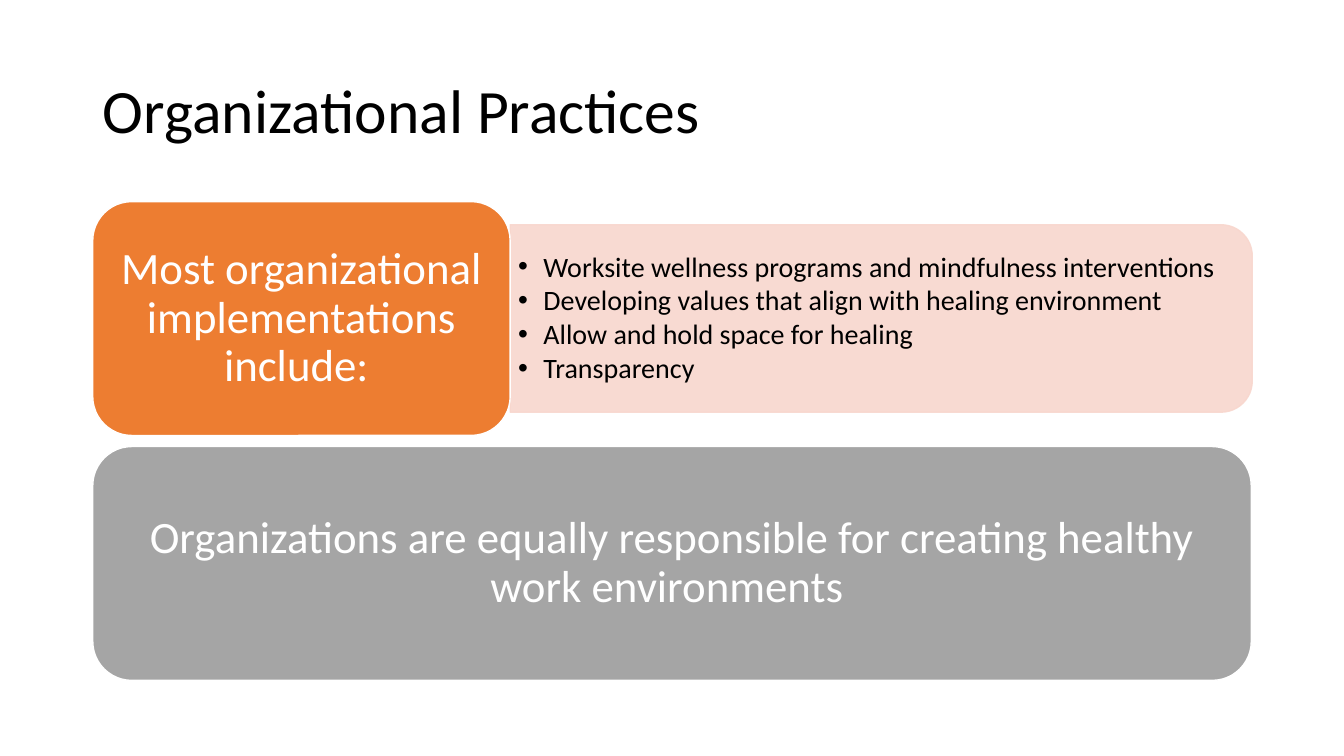
from lxml import etree
from pptx import Presentation
from pptx.dml.color import RGBColor
from pptx.enum import shapes, text
from pptx.oxml import ns
from pptx.util import Inches, Pt

TITLE = "Organizational Practices"
PRACTICES = [
    "Worksite wellness programs and mindfulness interventions",
    "Developing values that align with healing environment",
    "Allow and hold space for healing",
    "Transparency",
]
# text, width, fill; the trailing space shifts the centred last line
CARDS = [
    ("Most organizational implementations include: ", 4.14, "ED7D31"),
    ("Organizations are equally responsible for creating healthy work environments ",
     11.49, "A5A5A5"),
]
FONT = "Calibri"
LEFT, TOP = 0.92, 2
CARD_HEIGHT, CARD_STEP = 2.32, 2.43
PANEL_WIDTH, PANEL_HEIGHT = 7.36, 1.86
PANEL_COLOR, PANEL_OPACITY = "F8D7CE", 90


def color(hex_string):
    return RGBColor.from_string(hex_string)


def place(shape, left, top, width, height):
    shape.left, shape.top = Inches(left), Inches(top)
    shape.width, shape.height = Inches(width), Inches(height)


def set_frame(frame, side, edge):
    """Wrap and vertically centre a text frame with the given insets."""
    frame.word_wrap = True
    frame.auto_size = text.MSO_AUTO_SIZE.NONE
    frame.vertical_anchor = text.MSO_ANCHOR.MIDDLE
    frame.margin_left = frame.margin_right = Inches(side)
    frame.margin_top = frame.margin_bottom = Inches(edge)


def style(para, size, hex_string, align, after=0):
    para.font.name, para.font.size = FONT, Pt(size)
    para.font.color.rgb = color(hex_string)
    para.alignment = align
    para.line_spacing = 0.9
    para.space_before, para.space_after = Pt(0), Pt(after)


def add_bullet(para, indent):
    props = para._p.get_or_add_pPr()
    props.set("marL", str(Inches(indent)))
    props.set("indent", str(-Inches(indent)))
    bullet = etree.Element(ns.qn("a:buChar"), char="•")
    props.insert_element_before(bullet, "a:tabLst", "a:defRPr", "a:extLst")


def add_block(page, kind, box, fill, line):
    block = page.shapes.add_shape(kind, *map(Inches, box))
    block.shadow.inherit = False
    block.fill.solid()
    block.fill.fore_color.rgb = color(fill)
    block.line.color.rgb = color(line)
    block.line.width = Pt(1)
    return block


def add_panel(page):
    """Add the pale panel, turned so that its rounded side faces right."""
    middle_x = LEFT + CARDS[0][1] + PANEL_WIDTH / 2
    middle_y = TOP + CARD_HEIGHT / 2
    box = (middle_x - PANEL_HEIGHT / 2, middle_y - PANEL_WIDTH / 2,
           PANEL_HEIGHT, PANEL_WIDTH)
    panel = add_block(page, shapes.MSO_SHAPE.ROUND_2_SAME_RECTANGLE, box,
                      PANEL_COLOR, PANEL_COLOR)
    panel.rotation = 90
    for tint in panel.element.spPr.iter(ns.qn("a:srgbClr")):
        etree.SubElement(tint, ns.qn("a:alpha"), val=str(PANEL_OPACITY * 1000))
    return panel


def main():
    deck = Presentation()
    deck.slide_width, deck.slide_height = Inches(13.33), Inches(7.5)
    page = deck.slides.add_slide(deck.slide_layouts[1])

    title = page.shapes.title
    place(title, LEFT, 0.4, 11.5, 1.45)
    title.text_frame.text = TITLE
    set_frame(title.text_frame, 0.1, 0.05)
    style(title.text_frame.paragraphs[0], 44, "000000", text.PP_ALIGN.LEFT)

    practices = page.placeholders[1]
    place(practices, LEFT + CARDS[0][1], 2.32, 7.27, 1.68)
    practices.text_frame.text = "\n".join(PRACTICES)
    set_frame(practices.text_frame, 0.08, 0.04)
    for para in practices.text_frame.paragraphs:
        style(para, 20, "000000", text.PP_ALIGN.LEFT, after=2.5)
        add_bullet(para, 0.25)
    practices.element.addprevious(add_panel(page).element)

    for row, (words, width, fill) in enumerate(CARDS):
        box = (LEFT, TOP + row * CARD_STEP, width, CARD_HEIGHT)
        card = add_block(page, shapes.MSO_SHAPE.ROUNDED_RECTANGLE, box, fill, "FFFFFF")
        card.text_frame.text = words
        set_frame(card.text_frame, 0.13, 0.07)
        style(card.text_frame.paragraphs[0], 32, "FFFFFF", text.PP_ALIGN.CENTER)

    deck.save("out.pptx")


if __name__ == "__main__":
    main()
